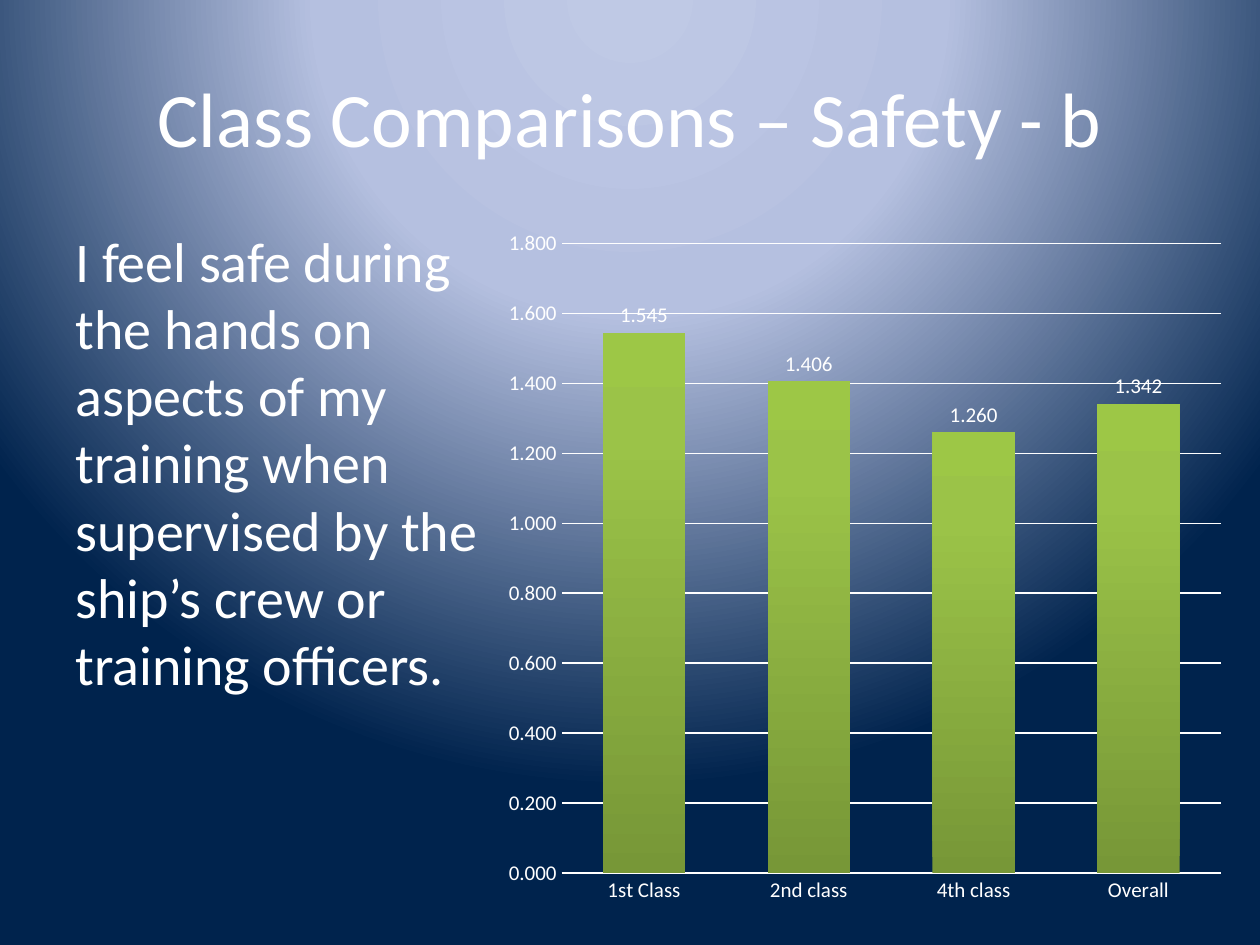
from pptx import Presentation
from pptx.chart.data import CategoryChartData
from pptx.dml.color import RGBColor
from pptx.enum.chart import XL_CHART_TYPE, XL_LABEL_POSITION, XL_TICK_MARK
from pptx.enum.text import MSO_ANCHOR, PP_ALIGN
from pptx.oxml import parse_xml
from pptx.oxml.ns import nsdecls
from pptx.util import Pt

PX = 914400 / 126
WHITE = "FFFFFF"


def set_font(font, size):
    for name, value in {"name": "Calibri", "size": Pt(size), "bold": False}.items():
        setattr(font, name, value)
    font.color.rgb = RGBColor.from_string(WHITE)


def set_stops(grad, stops):
    xml = "".join(f'<a:gs pos="{pos * 1000}"><a:srgbClr val="{color}"/></a:gs>'
                  for pos, color in stops)
    grad.replace(grad.xpath("a:gsLst")[0],
                 parse_xml(f'<a:gsLst {nsdecls("a")}>{xml}</a:gsLst>'))


prs = Presentation()
prs.slide_width, prs.slide_height = round(1260 * PX), round(945 * PX)
s = prs.slides.add_slide(prs.slide_layouts[6])

# Background: circular glow centred above the top edge
s.background.fill.gradient()
grad = s.element.xpath(".//p:bg//a:gradFill")[0]
set_stops(grad, [(0, "BFC9E5"), (40, "B5C0E0"), (100, "00234D")])
grad.replace(grad.xpath("a:lin")[0], parse_xml(
    f'<a:path {nsdecls("a")} path="circle">'
    '<a:fillToRect l="50000" t="-80000" r="50000" b="180000"/></a:path>'))

# Title and survey statement
texts = [
    ("Class Comparisons – Safety - b", (63, 38, 1134, 158), 44,
     PP_ALIGN.CENTER, MSO_ANCHOR.MIDDLE),
    ("I feel safe during the hands on aspects of my training when supervised "
     "by the ship’s crew or training officers.", (63, 220, 472, 624), 32,
     PP_ALIGN.LEFT, MSO_ANCHOR.TOP),
]
for text, box, size, align, anchor in texts:
    tf = s.shapes.add_textbox(*(round(v * PX) for v in box)).text_frame
    tf.word_wrap = True
    tf.vertical_anchor = anchor
    p = tf.paragraphs[0]
    p.alignment = align
    r = p.add_run()
    r.text = text
    set_font(r.font, size)

# Column chart of class averages
data = CategoryChartData(number_format="0.000")
data.categories = ["1st Class", "2nd class", "4th class", "Overall"]
data.add_series("Series 1", [1.545, 1.406, 1.26, 1.342])
box = (494, 231, 735, 683)
chart = s.shapes.add_chart(XL_CHART_TYPE.COLUMN_CLUSTERED,
                           *(round(v * PX) for v in box), data).chart
chart.has_legend = False
chart.has_title = False
set_font(chart.font, 10)

# Fixed inner plot area
plot_area = chart.element.xpath(".//c:plotArea")[0]
for layout in plot_area.xpath("c:layout"):
    plot_area.remove(layout)
places = {"x": 0.092, "y": 0.017, "w": 0.897, "h": 0.923}
modes = "".join(f'<c:{k}Mode val="edge"/>' for k in "xy")
sizes = "".join(f'<c:{k} val="{v}"/>' for k, v in places.items())
plot_area.insert(0, parse_xml(
    f'<c:layout {nsdecls("c")}><c:manualLayout><c:layoutTarget val="inner"/>'
    f'{modes}{sizes}</c:manualLayout></c:layout>'))

# Axes
cat, val = chart.category_axis, chart.value_axis
for axis in (cat, val):
    axis.major_tick_mark = axis.minor_tick_mark = XL_TICK_MARK.NONE
    set_font(axis.tick_labels.font, 12)
for name, value in {"minimum_scale": 0, "maximum_scale": 1.8, "major_unit": 0.2,
                    "has_major_gridlines": True}.items():
    setattr(val, name, value)
val.tick_labels.number_format = "0.000"
val.tick_labels.number_format_is_linked = False
val.format.line.fill.background()
for line, width in ((cat.format.line, 1), (val.major_gridlines.format.line, 0.75)):
    line.color.rgb = RGBColor.from_string(WHITE)
    line.width = Pt(width)

# Columns and value labels
plot = chart.plots[0]
plot.vary_by_categories = False
plot.gap_width, plot.overlap = 100, -24
ser = plot.series[0]
ser.format.fill.gradient()
ser.format.fill.gradient_angle = 90
set_stops(ser.format.fill._xPr.xpath("a:gradFill")[0],
          [(0, "779737"), (80, "9BC348"), (100, "9DC746")])
labels = ser.data_labels
for name, value in {"show_value": True, "position": XL_LABEL_POSITION.OUTSIDE_END,
                    "number_format": "0.000", "number_format_is_linked": False}.items():
    setattr(labels, name, value)
set_font(labels.font, 12)

prs.save("out.pptx")
